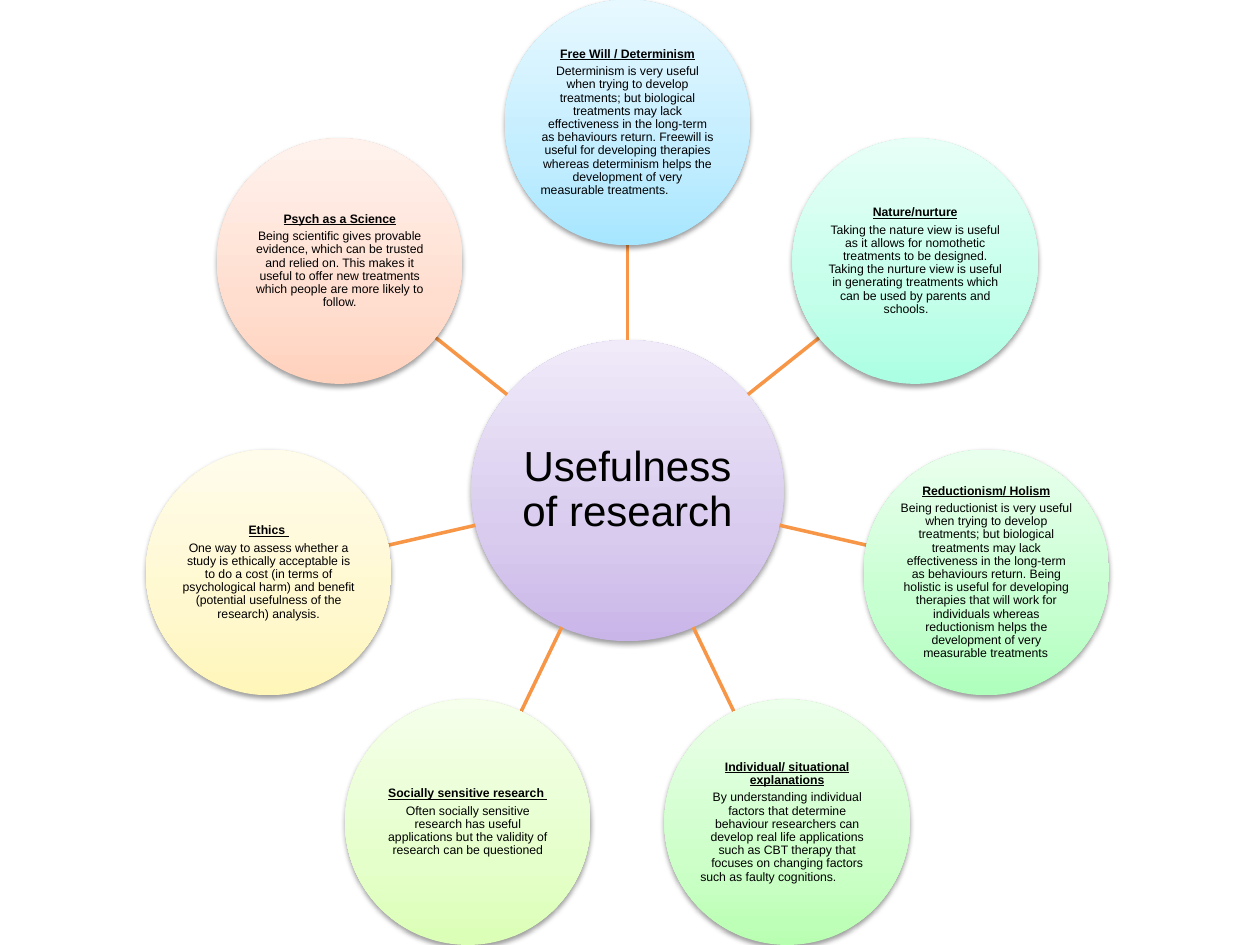
from copy import deepcopy
from dataclasses import dataclass
from math import cos, hypot, pi, sin

from pptx import Presentation
from pptx.dml.color import RGBColor as Rgb
from pptx.enum.shapes import MSO_CONNECTOR as Connector, MSO_SHAPE as Shape
from pptx.enum.text import MSO_ANCHOR as Anchor, PP_ALIGN as Align
from pptx.oxml import parse_xml
from pptx.oxml.ns import nsdecls, qn
from pptx.util import Cm, Pt


@dataclass(frozen=True)
class Theme:
    font: str = "Arial"
    ink: str = "000000"
    spoke: str = "F79646"
    spoke_width: float = 2
    hub_size: float = 24
    node_size: float = 7
    stops: tuple = (0, 0.35, 1)
    # Each gradient runs from the bottom of a circle to its top.
    lilac: tuple = ("C9B5E8", "D8CBEE", "F0EAF9")
    sky: tuple = ("A7E6FF", "C1EDFF", "E7F8FF")
    aqua: tuple = ("ABFFE3", "C3FFEA", "E8FFF7")
    mint: tuple = ("AFFFBD", "C6FFD0", "E9FFED")
    green: tuple = ("B9FFB2", "CDFFC9", "ECFFEA")
    lime: tuple = ("DBFFB6", "E5FFCB", "F5FFEB")
    lemon: tuple = ("FFF6B9", "FFF8CE", "FFFCEC")
    peach: tuple = ("FFD2BD", "FFDED0", "FFF2ED")


THEME = Theme()

# Lengths in centimetres
HUB_X, HUB_Y = 12.65, 9.89
HUB_WIDTH, HUB_HEIGHT = 6.3, 6.07
NODE_SIZE = 4.95
RING = 7.42

# Clockwise from the top
TOPICS = [
    (THEME.sky, "Free Will / Determinism",
     "Determinism is very useful when trying to develop treatments; but "
     "biological treatments may lack effectiveness in the long-term as "
     "behaviours return. Freewill is useful for developing therapies whereas "
     "determinism helps the development of very measurable treatments. \t"),
    (THEME.aqua, "Nature/nurture",
     "Taking the nature view is useful as it allows for nomothetic treatments "
     "to be designed. Taking the nurture view is useful in generating "
     "treatments which can be used by parents and schools.\t"),
    (THEME.mint, "Reductionism/ Holism",
     "Being reductionist is very useful when trying to develop treatments; but "
     "biological treatments may lack effectiveness in the long-term as "
     "behaviours return. Being holistic is useful for developing therapies "
     "that will work for individuals whereas reductionism helps the "
     "development of very measurable treatments\t"),
    (THEME.green, "Individual/ situational explanations",
     "By understanding individual factors that determine behaviour researchers "
     "can develop real life applications such as CBT therapy that focuses on "
     "changing factors such as faulty cognitions. \t"),
    (THEME.lime, "Socially sensitive research ",
     "Often socially sensitive research has useful applications but the "
     "validity of research can be questioned"),
    (THEME.lemon, "Ethics ",
     "One way to assess whether a study is ethically acceptable is to do a "
     "cost (in terms of psychological harm) and benefit (potential usefulness "
     "of the research) analysis."),
    (THEME.peach, "Psych as a Science",
     "Being scientific gives provable evidence, which can be trusted and "
     "relied on. This makes it useful to offer new treatments which people are "
     "more likely to follow."),
]


def apply(target, values):
    for name, value in values.items():
        setattr(target, name, value)


class Painter:
    def __init__(self, page, theme):
        self.page = page
        self.theme = theme

    def circle(self, x, y, width, height, colors):
        """Draw a shaded ellipse centred on x, y."""
        disc = self.page.shapes.add_shape(
            Shape.OVAL, Cm(x - width / 2), Cm(y - height / 2), Cm(width), Cm(height))
        disc.line.fill.background()
        self.gradient(disc, colors)
        self.soft_shadow(disc)
        return disc

    def gradient(self, disc, colors):
        disc.fill.gradient()
        disc.fill.gradient_angle = 90
        first = disc._element.spPr.find(".//" + qn("a:gs"))
        first.addnext(deepcopy(first))
        for stop, position, color in zip(
                disc.fill.gradient_stops, self.theme.stops, colors):
            stop.position = position
            stop.color.rgb = Rgb.from_string(color)

    def soft_shadow(self, disc):
        disc.shadow.inherit = False
        disc._element.spPr.find(qn("a:effectLst")).append(parse_xml(
            f'<a:outerShdw {nsdecls("a")} blurRad="40000" dist="20000" '
            'dir="5400000" rotWithShape="0"><a:srgbClr val="000000">'
            '<a:alpha val="38000"/></a:srgbClr></a:outerShdw>'))

    def label(self, disc, lines, size, inset=0):
        """Fill a circle with paragraphs given as (text, is_heading) pairs."""
        box = disc.text_frame
        margins = {f"margin_{side}": Cm(inset)
                   for side in ("left", "top", "right", "bottom")}
        apply(box, {"word_wrap": True, "vertical_anchor": Anchor.MIDDLE, **margins})
        for index, (text, is_heading) in enumerate(lines):
            para = box.add_paragraph() if index else box.paragraphs[0]
            apply(para, {"alignment": Align.CENTER, "line_spacing": 0.9,
                         "space_after": Pt(round(size * 0.35, 1))})
            span = para.add_run()
            span.text = text
            apply(span.font, {"name": self.theme.font, "size": Pt(size),
                              "bold": is_heading, "underline": is_heading})
            span.font.color.rgb = Rgb.from_string(self.theme.ink)

    def spoke(self, start, end):
        line = self.page.shapes.add_connector(
            Connector.STRAIGHT, *(Cm(value) for value in (*start, *end)))
        line.line.color.rgb = Rgb.from_string(self.theme.spoke)
        line.line.width = Pt(self.theme.spoke_width)
        line._element.spPr.append(parse_xml(f'<a:effectLst {nsdecls("a")}/>'))


def ring_point(angle, distance):
    """Point at a clockwise angle from straight above the hub."""
    return HUB_X + distance * sin(angle), HUB_Y - distance * cos(angle)


def hub_radius(angle):
    return 1 / hypot(sin(angle) / (HUB_WIDTH / 2), cos(angle) / (HUB_HEIGHT / 2))


def main():
    deck = Presentation()
    apply(deck, {"slide_width": Cm(25.4), "slide_height": Cm(19.05)})
    painter = Painter(deck.slides.add_slide(deck.slide_layouts[6]), THEME)

    hub = painter.circle(HUB_X, HUB_Y, HUB_WIDTH, HUB_HEIGHT, THEME.lilac)
    painter.label(hub, [("Usefulness of research", False)], THEME.hub_size, 0.05)

    for index, (colors, heading, body) in enumerate(TOPICS):
        angle = 2 * pi * index / len(TOPICS)
        painter.spoke(ring_point(angle, hub_radius(angle)),
                      ring_point(angle, RING - NODE_SIZE / 2))
        node = painter.circle(*ring_point(angle, RING), NODE_SIZE, NODE_SIZE, colors)
        painter.label(node, [(heading, True), (body, False)], THEME.node_size)

    deck.save("out.pptx")


if __name__ == "__main__":
    main()
